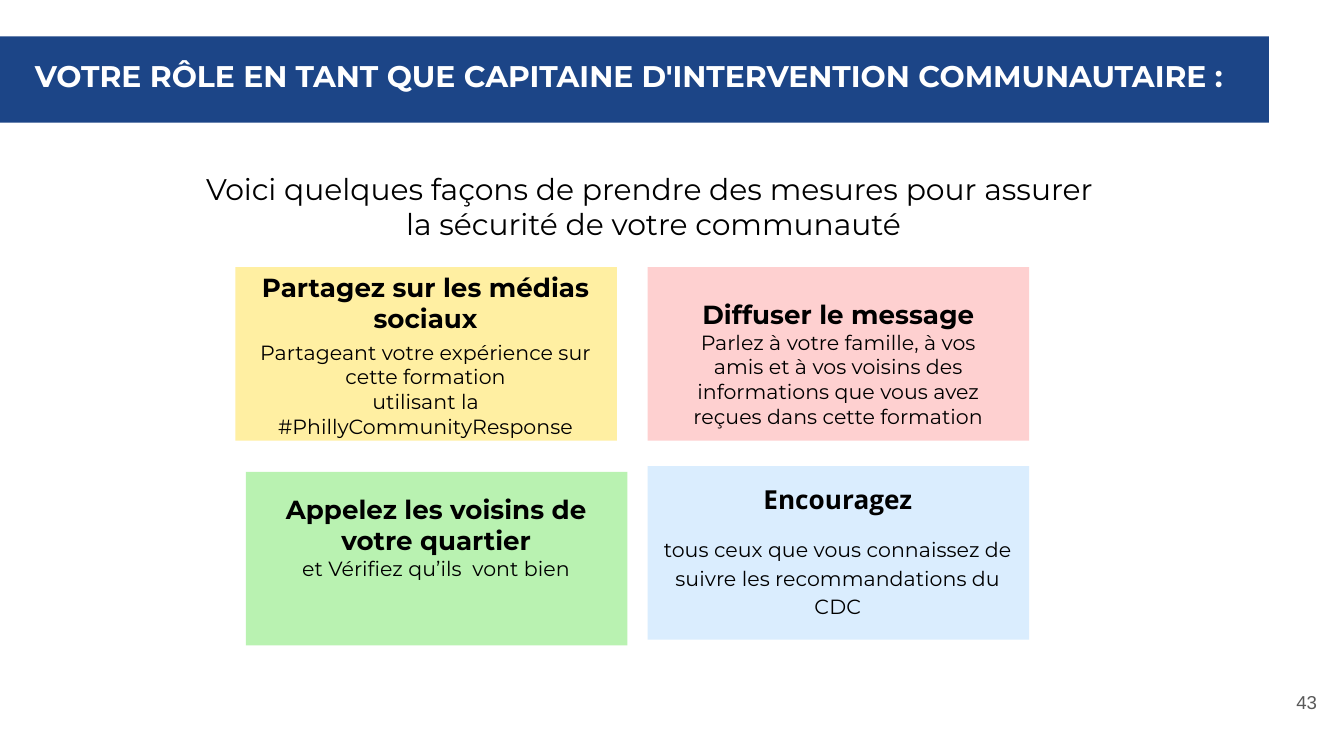
"""Build the slide on the role of a community response captain."""
from dataclasses import dataclass

import pptx
import pptx.dml.color
import pptx.enum.shapes
import pptx.enum.text
import pptx.slide
import pptx.util

Cm = pptx.util.Cm
Pt = pptx.util.Pt
Align = pptx.enum.text.PP_ALIGN

COLORS = {
    "banner": "1C4587",
    "yellow": "FFEFA2",
    "pink": "FED0D0",
    "green": "B9F2B1",
    "blue": "DAEDFE",
    "black": "000000",
    "white": "FFFFFF",
    "gray": "595959",
}
CARD_WIDTH, CARD_HEIGHT = 7.21, 3.28


@dataclass(frozen=True)
class Frame:
    left: float
    top: float
    width: float
    height: float


@dataclass(frozen=True)
class Line:
    text: str
    size: float
    bold: bool = False
    font: str = "Montserrat"
    color: str = "black"
    align: Align = Align.CENTER
    before: float = 0
    spacing: float = 1.0


@dataclass(frozen=True)
class Card:
    left: float
    top: float
    color: str
    text_frame: Frame
    heading: str
    body: str
    heading_font: str = "Montserrat"
    body_before: float = 0
    body_spacing: float = 1.0
    ending: str = ""


CARDS = [
    Card(4.45, 5.05, "yellow", Frame(4.72, 5.03, 6.65, 3.2),
         "Partagez sur les médias sociaux",
         "Partageant votre expérience sur cette formation",
         body_before=3, ending="utilisant la #PhillyCommunityResponse"),
    Card(12.24, 5.05, "pink", Frame(12.62, 5.54, 6.45, 2.6),
         "Diffuser le message",
         "Parlez à votre famille, à vos amis et à vos voisins des "
         "informations que vous avez reçues dans cette formation"),
    Card(4.65, 8.92, "green", Frame(4.83, 9.22, 6.83, 2),
         "Appelez les voisins de votre quartier",
         "et Vérifiez qu’ils  vont bien"),
    Card(12.24, 8.81, "blue", Frame(12.14, 9.04, 7.39, 2.8),
         "Encouragez",
         "tous ceux que vous connaissez de suivre les recommandations du CDC",
         heading_font="Open Sans", body_before=10, body_spacing=1.15),
]


def rgb(name: str) -> pptx.dml.color.RGBColor:
    """Return the named colour."""
    return pptx.dml.color.RGBColor.from_string(COLORS[name])


def add_panel(page: pptx.slide.Slide, frame: Frame, color: str) -> None:
    """Draw a plain filled rectangle."""
    panel = page.shapes.add_shape(
        pptx.enum.shapes.MSO_SHAPE.RECTANGLE,
        Cm(frame.left), Cm(frame.top), Cm(frame.width), Cm(frame.height))
    panel.shadow.inherit = False
    panel.fill.solid()
    panel.fill.fore_color.rgb = rgb(color)
    panel.line.fill.background()


def add_text(page: pptx.slide.Slide, frame: Frame, lines: list[Line],
             inset_x: float = 0.18, inset_y: float = 0.1) -> None:
    """Draw a wrapped text box with one paragraph per line."""
    box = page.shapes.add_textbox(
        Cm(frame.left), Cm(frame.top), Cm(frame.width), Cm(frame.height))
    text = box.text_frame
    text.word_wrap = True
    text.margin_left = text.margin_right = Cm(inset_x)
    text.margin_top = text.margin_bottom = Cm(inset_y)
    for index, line in enumerate(lines):
        para = text.add_paragraph() if index else text.paragraphs[0]
        para.text = line.text
        para.alignment = line.align
        para.space_before = Pt(line.before)
        para.line_spacing = line.spacing
        para.font.name = line.font
        para.font.size = Pt(line.size)
        para.font.bold = line.bold
        para.font.color.rgb = rgb(line.color)


def add_card(page: pptx.slide.Slide, card: Card) -> None:
    """Draw a coloured card with its heading and body."""
    add_panel(page, Frame(card.left, card.top, CARD_WIDTH, CARD_HEIGHT), card.color)
    lines = [
        Line(card.heading, 14, bold=True, font=card.heading_font),
        Line(card.body, 11, before=card.body_before, spacing=card.body_spacing),
    ]
    if card.ending:
        lines.append(Line(card.ending, 11))
    add_text(page, card.text_frame, lines)


def main() -> None:
    """Build and save the deck."""
    deck = pptx.Presentation()
    deck.slide_width, deck.slide_height = Cm(25.4), Cm(14.29)
    page = deck.slides.add_slide(deck.slide_layouts[6])

    add_panel(page, Frame(0, 0.69, 23.98, 1.63), "banner")
    add_text(page, Frame(0.41, 0.84, 24.41, 1.4), [
        Line("VOTRE RÔLE EN TANT QUE CAPITAINE D'INTERVENTION COMMUNAUTAIRE :",
             16, bold=True, color="white", align=Align.LEFT),
    ], inset_x=0.25, inset_y=0.25)
    add_text(page, Frame(0.71, 3.12, 23.29, 1.57), [
        Line("Voici quelques façons de prendre des mesures pour assurer ", 16),
        Line("la sécurité de votre communauté", 16),
    ])
    for card in CARDS:
        add_card(page, card)
    add_text(page, Frame(23.55, 12.95, 1.52, 1.09), [
        Line("43", 10, font="Arial", color="gray", align=Align.RIGHT),
    ])
    deck.save("out.pptx")


if __name__ == "__main__":
    main()
